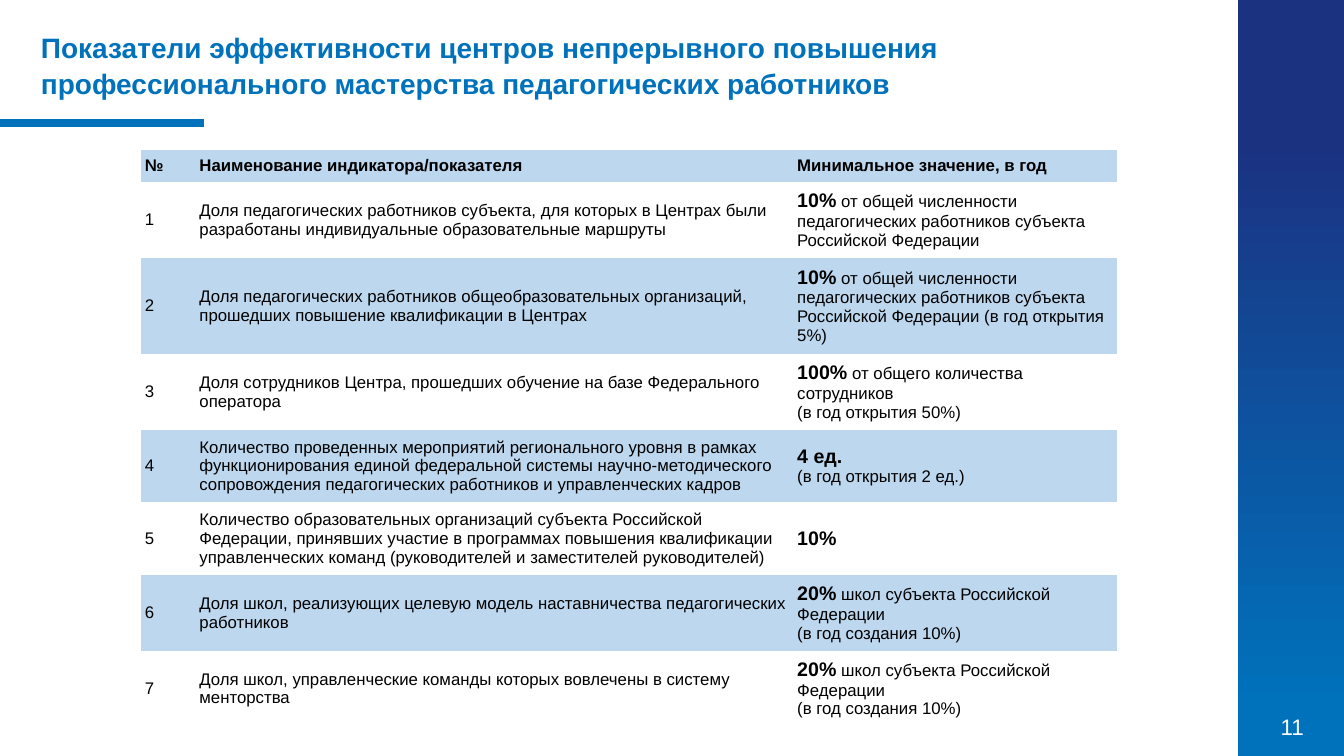
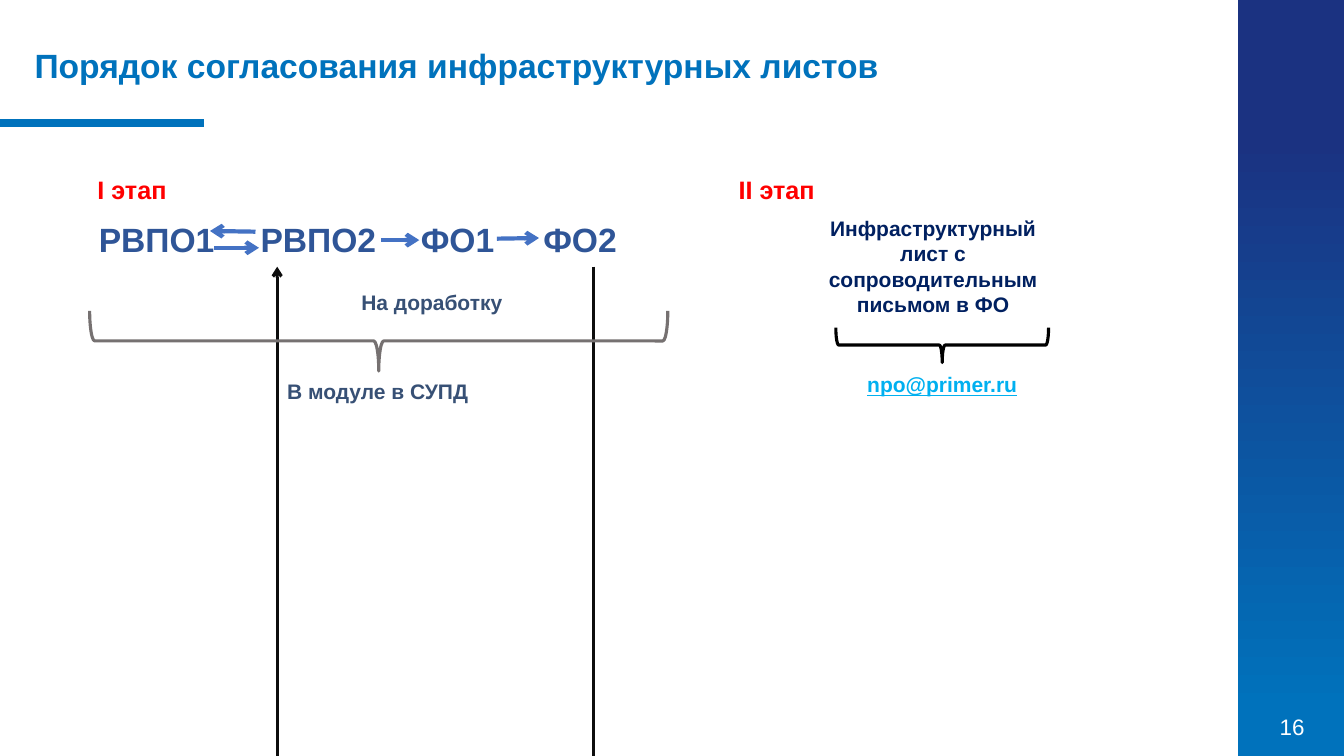
from dataclasses import dataclass

from lxml.etree import SubElement
from pptx import Presentation
from pptx.dml.color import RGBColor
from pptx.enum.shapes import MSO_CONNECTOR, MSO_SHAPE
from pptx.enum.text import MSO_ANCHOR, MSO_AUTO_SIZE, PP_ALIGN
from pptx.oxml.ns import qn
from pptx.presentation import Presentation as Deck
from pptx.slide import Slide
from pptx.text.text import Font
from pptx.util import Pt

FONT = "Arial"
WIDTH, HEIGHT = 960, 540
COLORS = {
    "accent": "0072BC",
    "navy": "1B3281",
    "row": "BDD7EE",
    "step": "2F5597",
    "arrow": "4472C4",
    "return": "0D0D0D",
    "note": "375075",
    "brace": "767171",
    "letter": "002060",
    "stage": "FF0000",
    "mail": "00B0F0",
    "black": "000000",
    "white": "FFFFFF",
}
PLAIN_TABLE_STYLE = "{2D5ABB26-0587-4C30-8999-92F81FD0307C}"
COLUMN_WIDTHS = (39, 427, 231)
ROW_HEIGHTS = (22, 53.5, 67.5, 53.5, 51, 51, 53.5, 53.5)
HEADERS = ("№", "Наименование индикатора/показателя", "Минимальное значение, в год")


@dataclass(frozen=True)
class Title:
    text: str
    left: float
    top: float
    height: float
    size: float
    spacing: float = 1.0


@dataclass(frozen=True)
class Indicator:
    name: str
    value: str
    detail: str = ""
    note: str = ""


@dataclass(frozen=True)
class Label:
    text: str
    left: float
    top: float
    width: float
    height: float
    size: float
    color: str
    align: PP_ALIGN = PP_ALIGN.LEFT
    wrap: bool = True
    underline: bool = False


@dataclass(frozen=True)
class Line:
    x1: float
    y1: float
    x2: float
    y2: float
    color: str
    width: float
    arrow: bool = True


@dataclass(frozen=True)
class Brace:
    """A brace pointing down, measured as it appears."""
    left: float
    top: float
    width: float
    height: float
    color: str


INDICATORS = (
    Indicator(
        "Доля педагогических работников субъекта, для которых в Центрах были "
        "разработаны индивидуальные образовательные маршруты",
        "10%", " от общей численности педагогических работников субъекта Российской Федерации"),
    Indicator(
        "Доля педагогических работников общеобразовательных организаций, "
        "прошедших повышение квалификации в Центрах",
        "10%", " от общей численности педагогических работников субъекта "
        "Российской Федерации (в год открытия 5%)"),
    Indicator(
        "Доля сотрудников Центра, прошедших обучение на базе Федерального оператора",
        "100%", " от общего количества сотрудников", "(в год открытия 50%)"),
    Indicator(
        "Количество проведенных мероприятий регионального уровня в рамках "
        "функционирования единой федеральной системы научно-методического "
        "сопровождения педагогических работников и управленческих кадров",
        "4 ед.", note="(в год открытия 2 ед.)"),
    Indicator(
        "Количество образовательных организаций субъекта Российской Федерации, "
        "принявших участие в программах повышения квалификации управленческих "
        "команд (руководителей и заместителей руководителей)",
        "10%"),
    Indicator(
        "Доля школ, реализующих целевую модель наставничества педагогических работников",
        "20%", " школ субъекта Российской Федерации", "(в год создания 10%)"),
    Indicator(
        "Доля школ, управленческие команды которых вовлечены в систему менторства",
        "20%", " школ субъекта Российской Федерации", "(в год создания 10%)"),
)

LINES = (
    Line(272, 171.5, 299.5, 171.5, "arrow", 3),
    Line(355, 170.5, 385, 170, "arrow", 3),
    Line(182.5, 165.5, 150, 165, "arrow", 3),
    Line(153, 177, 185, 177, "arrow", 3),
    Line(198, HEIGHT, 198, 190.5, "return", 2.25),
    Line(424, 190.5, 424, HEIGHT, "return", 2.25, arrow=False),
)
BRACES = (
    Brace(64, 222, 413, 43, "brace"),
    Brace(597, 234, 152, 25, "black"),
)
LABELS = (
    Label("РВПО1", 63.5, 152.5, 99, 36, 24, "step"),
    Label("РВПО2", 179, 152.5, 98, 36, 24, "step"),
    Label("ФО1", 293.5, 152.5, 84, 36, 24, "step"),
    Label("ФО2", 381, 152.5, 86, 36, 24, "step"),
    Label("На доработку", 251, 203, 134, 25, 15, "note"),
    Label("В модуле в СУПД", 198, 267, 155, 25, 15, "note"),
    Label("Инфраструктурный лист с сопроводительным письмом в ФО",
          584.5, 150.5, 164, 80, 15, "letter", PP_ALIGN.CENTER),
    Label("I этап", 62.5, 121, 65, 29, 18, "stage", wrap=False),
    Label("II этап", 520.5, 121, 70, 29, 18, "stage", wrap=False),
    Label("npo@primer.ru", 589, 262, 168, 25, 15, "mail", PP_ALIGN.CENTER, underline=True),
)


def rgb(name: str) -> RGBColor:
    return RGBColor.from_string(COLORS[name])


def style(font: Font, size: float, color: str, bold: bool = False) -> None:
    font.name = FONT
    font.size = Pt(size)
    font.bold = bold
    font.color.rgb = rgb(color)


def add_line(s: Slide, line: Line) -> None:
    c = s.shapes.add_connector(
        MSO_CONNECTOR.STRAIGHT, Pt(line.x1), Pt(line.y1), Pt(line.x2), Pt(line.y2))
    c.line.color.rgb = rgb(line.color)
    c.line.width = Pt(line.width)
    if line.arrow:
        SubElement(c.line._get_or_add_ln(), qn("a:tailEnd"), type="arrow")
    SubElement(c._element.spPr, qn("a:effectLst"))


def add_label(s: Slide, label: Label, bold: bool = True) -> None:
    sp = s.shapes.add_textbox(
        Pt(label.left), Pt(label.top), Pt(label.width), Pt(label.height))
    tf = sp.text_frame
    tf.word_wrap = label.wrap
    tf.text = label.text
    p = tf.paragraphs[0]
    p.alignment = label.align
    r = p.runs[0]
    style(r.font, label.size, label.color, bold)
    if label.underline:
        r.font.underline = True


def add_brace(s: Slide, brace: Brace) -> None:
    center_x = brace.left + brace.width / 2
    center_y = brace.top + brace.height / 2
    sp = s.shapes.add_shape(
        MSO_SHAPE.RIGHT_BRACE, Pt(center_x - brace.height / 2), Pt(center_y - brace.width / 2),
        Pt(brace.height), Pt(brace.width))
    sp.rotation = 90
    sp.shadow.inherit = False
    sp.fill.background()
    sp.line.color.rgb = rgb(brace.color)
    sp.line.width = Pt(2.25)


def add_slide(prs: Deck, title: Title, number: int) -> Slide:
    """Add a slide with the side band, page number, accent line and title."""
    s = prs.slides.add_slide(prs.slide_layouts[5])
    band = s.shapes.add_shape(MSO_SHAPE.RECTANGLE, Pt(884), 0, Pt(WIDTH - 884), Pt(HEIGHT))
    band.shadow.inherit = False
    band.line.fill.background()
    band.fill.gradient()
    band.fill.gradient_angle = 270
    stops = ((0.18, "navy"), (0.94, "accent"))
    for stop, (position, color) in zip(band.fill.gradient_stops, stops):
        stop.position = position
        stop.color.rgb = rgb(color)
    add_label(s, Label(str(number), 894, 506, 58, 29, 16, "white", PP_ALIGN.CENTER), bold=False)
    add_line(s, Line(0, 88, 146, 88, "accent", 6, arrow=False))

    sp = s.shapes.title
    sp.left, sp.top = Pt(title.left), Pt(title.top)
    sp.width, sp.height = Pt(837), Pt(title.height)
    tf = sp.text_frame
    tf.text = title.text
    tf.word_wrap = True
    tf.auto_size = MSO_AUTO_SIZE.NONE
    tf.vertical_anchor = MSO_ANCHOR.MIDDLE
    p = tf.paragraphs[0]
    p.alignment = PP_ALIGN.LEFT
    p.line_spacing = title.spacing
    style(p.runs[0].font, title.size, "accent", bold=True)
    return s


def add_indicator_table(s: Slide) -> None:
    frame = s.shapes.add_table(
        len(ROW_HEIGHTS), len(COLUMN_WIDTHS), Pt(101), Pt(107),
        Pt(sum(COLUMN_WIDTHS)), Pt(sum(ROW_HEIGHTS)))
    table = frame.table
    table.first_row = table.horz_banding = False
    table._tbl.tblPr.find(qn("a:tableStyleId")).text = PLAIN_TABLE_STYLE
    for column, width in zip(table.columns, COLUMN_WIDTHS):
        column.width = Pt(width)
    for row, height in zip(table.rows, ROW_HEIGHTS):
        row.height = Pt(height)

    rows = [HEADERS] + [(str(i), item.name, item.value) for i, item in enumerate(INDICATORS, 1)]
    for i, texts in enumerate(rows):
        for j, text in enumerate(texts):
            cell = table.cell(i, j)
            cell.margin_left = cell.margin_right = Pt(2.5)
            cell.margin_top = cell.margin_bottom = Pt(4.3)
            cell.vertical_anchor = MSO_ANCHOR.MIDDLE if i else MSO_ANCHOR.TOP
            if i % 2 == 0:
                cell.fill.solid()
                cell.fill.fore_color.rgb = rgb("row")
            else:
                cell.fill.background()
            tf = cell.text_frame
            tf.text = text
            is_value = i > 0 and j == 2
            style(tf.paragraphs[0].runs[0].font, 14 if is_value else 12, "black",
                  bold=is_value or i == 0)
            if not is_value:
                continue
            item = INDICATORS[i - 1]
            if item.detail:
                r = tf.paragraphs[0].add_run()
                r.text = item.detail
                style(r.font, 12, "black")
            if item.note:
                p = tf.add_paragraph()
                p.text = item.note
                style(p.runs[0].font, 12, "black")


def main() -> None:
    prs = Presentation()
    prs.slide_width, prs.slide_height = Pt(WIDTH), Pt(HEIGHT)

    s = add_slide(prs, Title(
        "Показатели эффективности центров непрерывного повышения "
        "профессионального мастерства педагогических работников",
        22, 16.5, 59, 20, 1.07), 11)
    add_indicator_table(s)

    s = add_slide(prs, Title(
        "Порядок согласования инфраструктурных листов", 17.5, 26.5, 40, 24), 16)
    for line in LINES:
        add_line(s, line)
    for brace in BRACES:
        add_brace(s, brace)
    for label in LABELS:
        add_label(s, label)

    prs.save("out.pptx")


if __name__ == "__main__":
    main()
